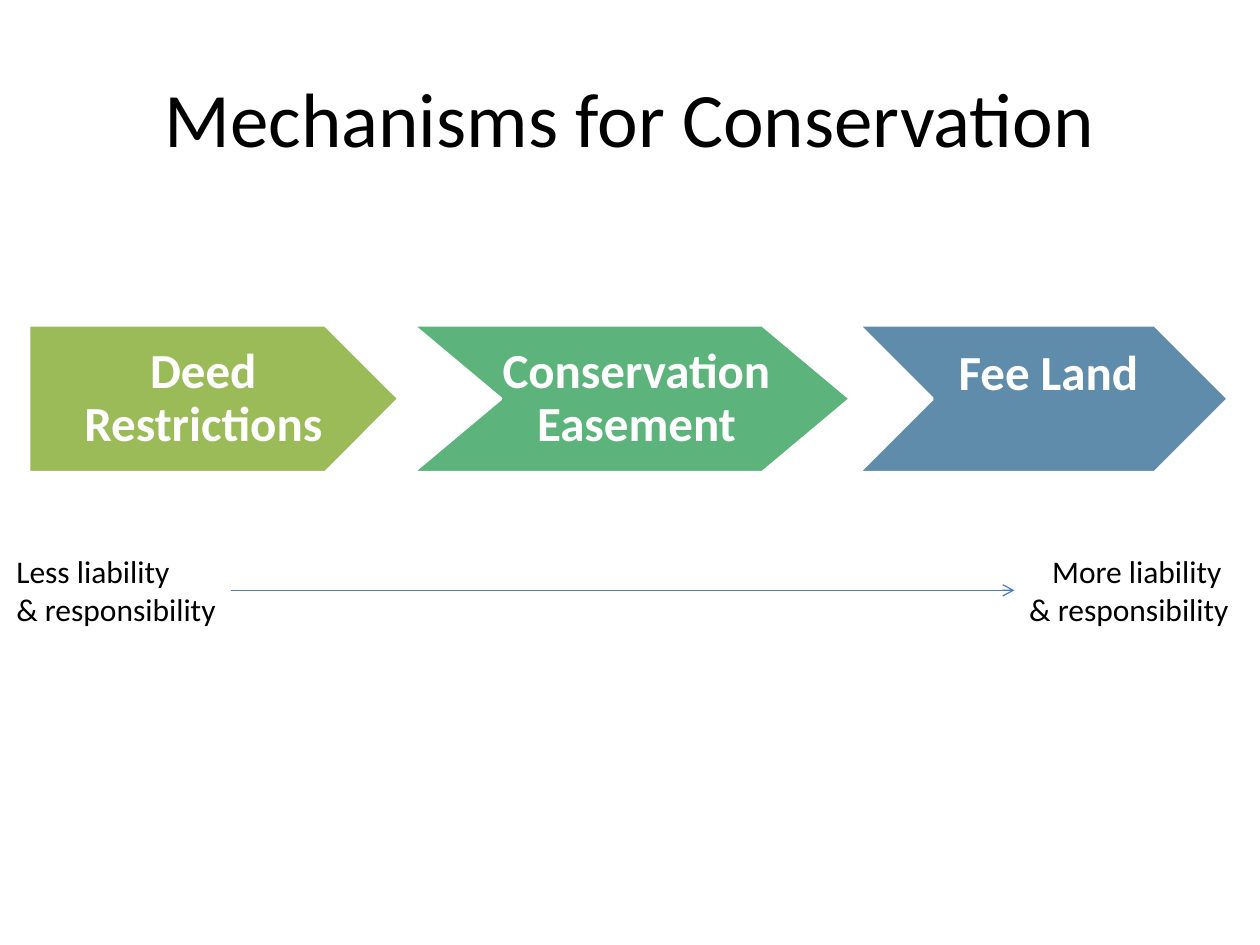
from dataclasses import dataclass

from lxml import etree
from pptx import Presentation
from pptx.dml.color import RGBColor
from pptx.enum.shapes import MSO_CONNECTOR
from pptx.enum.text import MSO_ANCHOR, MSO_AUTO_SIZE, PP_ALIGN
from pptx.oxml.ns import qn
from pptx.util import Cm, Pt

STRAIGHT = MSO_CONNECTOR.STRAIGHT
MIDDLE = MSO_ANCHOR.MIDDLE
FIT_SHAPE = MSO_AUTO_SIZE.SHAPE_TO_FIT_TEXT
LEFT, CENTER, RIGHT = PP_ALIGN.LEFT, PP_ALIGN.CENTER, PP_ALIGN.RIGHT


@dataclass(frozen=True)
class Theme:
    """Colours, typeface and type sizes of the slide."""

    font: str = "Calibri"
    ink: RGBColor = RGBColor(0x00, 0x00, 0x00)
    paper: RGBColor = RGBColor(0xFF, 0xFF, 0xFF)
    deed: RGBColor = RGBColor(0x9B, 0xBB, 0x59)
    easement: RGBColor = RGBColor(0x5C, 0xB3, 0x7C)
    fee_land: RGBColor = RGBColor(0x60, 0x8C, 0xAB)
    scale: RGBColor = RGBColor(0x4B, 0x7E, 0xBC)
    title_size: Pt = Pt(44)
    step_size: Pt = Pt(28)
    label_size: Pt = Pt(18)


THEME = Theme()


def format_paragraph(paragraph, size, color, alignment, bold=False):
    """Set the alignment and font of one paragraph."""
    paragraph.alignment = alignment
    font = paragraph.font
    font.name, font.size, font.bold = THEME.font, size, bold
    font.color.rgb = color


def place_title(slide, left, top, width, height, wording):
    """Fill the title placeholder and fit it to its box."""
    title = slide.shapes.title
    title.left, title.top, title.width, title.height = (
        Cm(left), Cm(top), Cm(width), Cm(height))
    title.text_frame.text = wording
    title.text_frame.vertical_anchor = MIDDLE
    format_paragraph(title.text_frame.paragraphs[0], THEME.title_size, THEME.ink, CENTER)


def add_step(slide, left, top, width, height, wording, color, tip, notch, insets):
    """Draw one arrow-shaped step with a pointed tip and an optional notch."""
    right, bottom, middle = left + width, top + height, top + height / 2
    outline = [(right - tip, top), (right, middle), (right - tip, bottom), (left, bottom)]
    if notch:
        outline.append((left + notch, middle))
    builder = slide.shapes.build_freeform(Cm(left), Cm(top))
    builder.add_line_segments([(Cm(x), Cm(y)) for x, y in outline], close=True)
    step = builder.convert_to_shape()
    step.shadow.inherit = False
    step.fill.solid()
    step.fill.fore_color.rgb = color
    step.line.color.rgb = THEME.paper
    step.line.width = Pt(2)
    frame = step.text_frame
    frame.word_wrap = True
    frame.vertical_anchor = MIDDLE
    frame.margin_left, frame.margin_top, frame.margin_right, frame.margin_bottom = map(Cm, insets)
    frame.text = wording
    frame.paragraphs[0].line_spacing = 0.9
    format_paragraph(frame.paragraphs[0], THEME.step_size, THEME.paper, CENTER, bold=True)


def place_steps(slide, left, top, height):
    """Lay the three mechanisms along one row."""
    steps = [
        ("Deed Restrictions", THEME.deed, 0, 7.47, 1.49, 0, (0.41, 0.2, 0.84, 0.2)),
        ("Conservation Easement", THEME.easement, 7.73, 8.84, 1.78, 1.78, (1.8, 0.2, 1.6, 0.2)),
        ("Fee Land", THEME.fee_land, 16.72, 7.47, 1.49, 1.49, (1.8, 0.2, 1.6, 1.17)),
    ]
    for wording, color, offset, width, tip, notch, insets in steps:
        add_step(slide, left + offset, top, width, height, wording, color, tip, notch, insets)


def add_label(slide, left, top, width, height, wording, alignment):
    """Write one end label of the liability scale."""
    label = slide.shapes.add_textbox(Cm(left), Cm(top), Cm(width), Cm(height))
    frame = label.text_frame
    frame.word_wrap = False
    frame.auto_size = FIT_SHAPE
    frame.text = wording
    for paragraph in frame.paragraphs:
        format_paragraph(paragraph, THEME.label_size, THEME.ink, alignment)


def place_scale(slide, left, top, width, height):
    """Place the liability labels at both ends with an arrow between them."""
    label_width = 4.57
    far_left = left + width - label_width
    add_label(slide, far_left, top, label_width, height,
              "More liability \n& responsibility", RIGHT)
    add_label(slide, left, top, label_width, height,
              "Less liability\n& responsibility", LEFT)
    middle = Cm(top + height / 2)
    arrow = slide.shapes.add_connector(
        STRAIGHT, Cm(left + label_width), middle, Cm(far_left), middle)
    arrow.line.color.rgb = THEME.scale
    arrow.line.width = Pt(0.75)
    properties = arrow.element.spPr
    etree.SubElement(properties.find(qn("a:ln")), qn("a:tailEnd"), type="arrow")
    etree.SubElement(properties, qn("a:effectLst"))


def main():
    """Build the slide and save it."""
    deck = Presentation()
    deck.slide_width, deck.slide_height = Cm(25.4), Cm(19.05)
    slide = deck.slides.add_slide(deck.slide_layouts[5])
    place_title(slide, 1.27, 0.76, 22.86, 3.18, "Mechanisms for Conservation")
    place_steps(slide, 0.58, 6.55, 2.98)
    place_scale(slide, 0.08, 11, 24.94, 1.8)
    deck.save("out.pptx")


if __name__ == "__main__":
    main()
